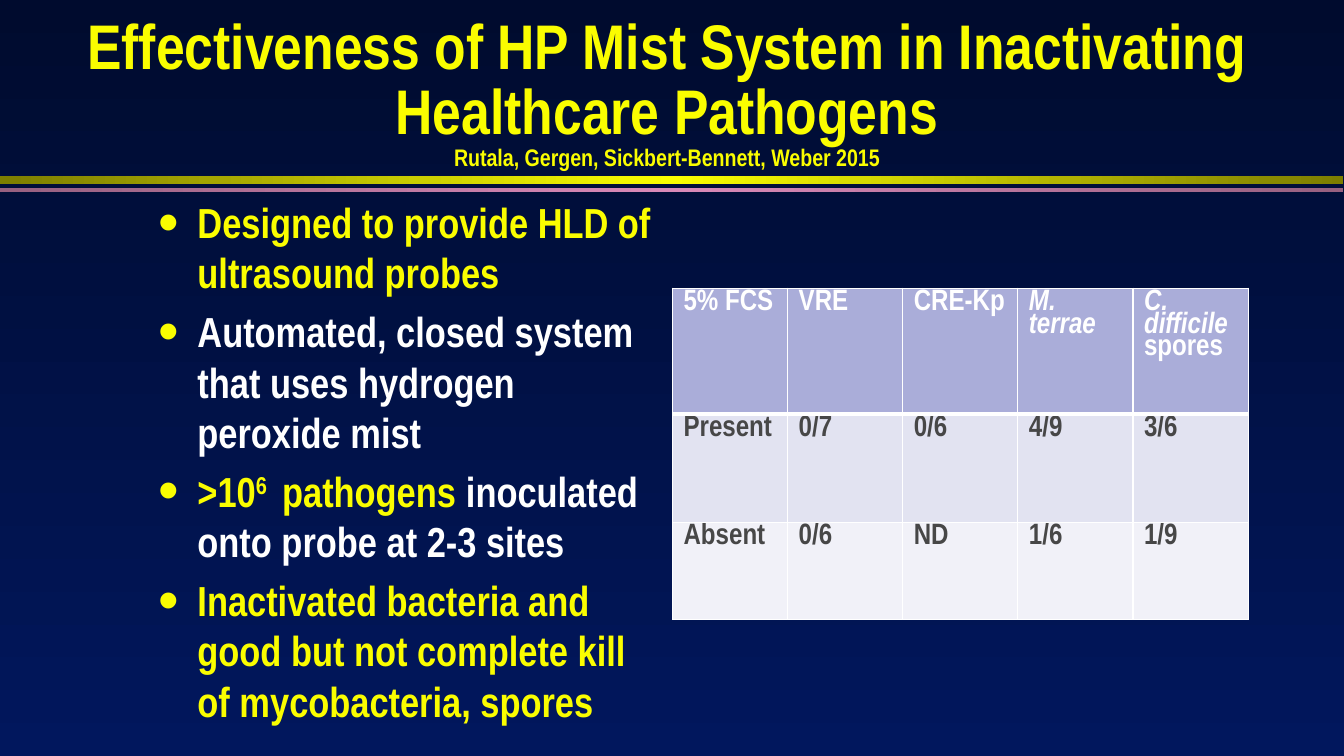
from lxml import etree
from pptx import Presentation
from pptx.dml.color import RGBColor
from pptx.enum.shapes import MSO_SHAPE
from pptx.enum.text import MSO_ANCHOR, PP_ALIGN
from pptx.oxml.ns import qn
from pptx.util import Inches, Pt

# Content
TITLE = "Effectiveness of HP Mist System in Inactivating Healthcare Pathogens"
CITATION = "Rutala, Gergen, Sickbert-Bennett, Weber 2015"

YELLOW = RGBColor(0xFA, 0xFD, 0x00)
WHITE = RGBColor(0xFF, 0xFF, 0xFF)
GREY = RGBColor(0x47, 0x47, 0x47)
HEADER_FILL = RGBColor(0xAA, 0xAD, 0xD9)
ROW_FILLS = [RGBColor(0xE2, 0xE3, 0xF1), RGBColor(0xF1, 0xF1, 0xF8)]
NIGHT = RGBColor(0x00, 0x0B, 0x2E)
NAVY = RGBColor(0x01, 0x17, 0x5D)
OLIVE = RGBColor(0x7D, 0x7E, 0x00)
MAUVE = RGBColor(0x97, 0x60, 0x80)
PINK = RGBColor(0xD9, 0x89, 0xB8)

# Each bullet is a list of (text, colour, superscript)
BULLETS = [
    [("Designed to provide HLD of ultrasound probes", YELLOW, False)],
    [("Automated, closed system that uses hydrogen peroxide mist", WHITE, False)],
    [(">10", YELLOW, False), ("6 ", YELLOW, True), (" pathogens ", YELLOW, False),
     ("inoculated onto probe at 2-3 sites", WHITE, False)],
    [("Inactivated bacteria and good but not complete kill of mycobacteria, spores",
      YELLOW, False)],
]
ROWS = [
    ["5% FCS", "VRE", "CRE-Kp", "M. terrae", "C. difficile\nspores"],
    ["Present", "0/7", "0/6", "4/9", "3/6"],
    ["Absent", "0/6", "ND", "1/6", "1/9"],
]
SPECIES = {"M. terrae", "C. difficile"}
ROW_HEIGHTS = [1.25, 1.07, 0.97]
COL_WIDTH = 1.142
# Top, height, edge colour, middle colour
RULES = [(1.75, 0.08, OLIVE, YELLOW), (1.87, 0.04, MAUVE, PINK)]

FONT = "Arial Narrow"
CENTER = PP_ALIGN.CENTER
BOTTOM = MSO_ANCHOR.BOTTOM
RECT = MSO_SHAPE.RECTANGLE


def set_gradient(fill, element, colors, angle):
    """Fill with evenly spaced colour stops."""
    fill.gradient()
    fill.gradient_angle = angle
    stops = element.find(".//" + qn("a:gsLst"))
    for stop in list(stops):
        stops.remove(stop)
    for i, color in enumerate(colors):
        stop = etree.SubElement(stops, qn("a:gs"), pos=str(100000 * i // (len(colors) - 1)))
        etree.SubElement(stop, qn("a:srgbClr"), val=str(color))


def style_run(r, size, color):
    r.font.name = FONT
    r.font.size = Pt(size)
    r.font.bold = True
    r.font.color.rgb = color


def add_text_frame(left, top, width, height):
    tf = slide.shapes.add_textbox(
        Inches(left), Inches(top), Inches(width), Inches(height)).text_frame
    tf.word_wrap = True
    return tf


def set_bullet(p):
    pPr = p._p.get_or_add_pPr()
    pPr.set("marL", str(Inches(0.39)))
    pPr.set("indent", str(-Inches(0.39)))
    color = etree.SubElement(pPr, qn("a:buClr"))
    etree.SubElement(color, qn("a:srgbClr"), val=str(YELLOW))
    etree.SubElement(pPr, qn("a:buSzPct"), val="140000")
    etree.SubElement(pPr, qn("a:buFont"), typeface="Arial")
    etree.SubElement(pPr, qn("a:buChar"), char="•")


def set_borders(cell, bottom):
    tcPr = cell._tc.get_or_add_tcPr()
    widths = {"a:lnL": 1, "a:lnR": 1, "a:lnT": 1, "a:lnB": bottom}
    for i, (side, width) in enumerate(widths.items()):
        ln = etree.Element(qn(side), w=str(Pt(width)))
        solid = etree.SubElement(ln, qn("a:solidFill"))
        etree.SubElement(solid, qn("a:srgbClr"), val=str(WHITE))
        tcPr.insert(i, ln)


prs = Presentation()
prs.slide_width, prs.slide_height = Inches(13.33), Inches(7.5)
slide = prs.slides.add_slide(prs.slide_layouts[6])
set_gradient(slide.background.fill, slide._element, [NIGHT, NAVY], 270)

# Rules below the title
for top, height, edge, middle in RULES:
    sp = slide.shapes.add_shape(RECT, 0, Inches(top), Inches(13.32), Inches(height))
    sp.shadow.inherit = False
    sp.line.fill.background()
    set_gradient(sp.fill, sp._element.spPr, [edge, middle, edge], 0)

# Title and citation
tf = add_text_frame(0.59, 0.5, 12.05, 1.25)
tf.vertical_anchor = BOTTOM
p = tf.paragraphs[0]
p.alignment = CENTER
p.line_spacing = 0.85
p.text = TITLE + "\v" + CITATION
for r, size in zip(p.runs, (45, 17.1)):
    style_run(r, size, YELLOW)

# Results table
table = slide.shapes.add_table(
    len(ROWS), len(ROWS[0]), Inches(6.67), Inches(2.86),
    Inches(COL_WIDTH * len(ROWS[0])), Inches(sum(ROW_HEIGHTS))).table
for column in table.columns:
    column.width = Inches(COL_WIDTH)
for i, row in enumerate(ROWS):
    table.rows[i].height = Inches(ROW_HEIGHTS[i])
    for j, text in enumerate(row):
        cell = table.cell(i, j)
        cell.margin_left = cell.margin_right = Inches(0.11)
        cell.fill.solid()
        cell.fill.fore_color.rgb = ROW_FILLS[i - 1] if i else HEADER_FILL
        set_borders(cell, 1 if i else 3)
        cell.text_frame.text = text
        for p in cell.text_frame.paragraphs:
            p.line_spacing = 0.8
            r = p.runs[0]
            style_run(r, 21, GREY if i else WHITE)
            r.font.italic = r.text in SPECIES

# Bullets
tf = add_text_frame(1.47, 1.9, 5.11, 5.42)
for i, parts in enumerate(BULLETS):
    p = tf.add_paragraph() if i else tf.paragraphs[0]
    if i:
        p.space_before = Pt(6)
    set_bullet(p)
    for text, color, superscript in parts:
        r = p.add_run()
        r.text = text
        style_run(r, 30, color)
        if superscript:
            r.font._element.set("baseline", "30000")

prs.save("out.pptx")
